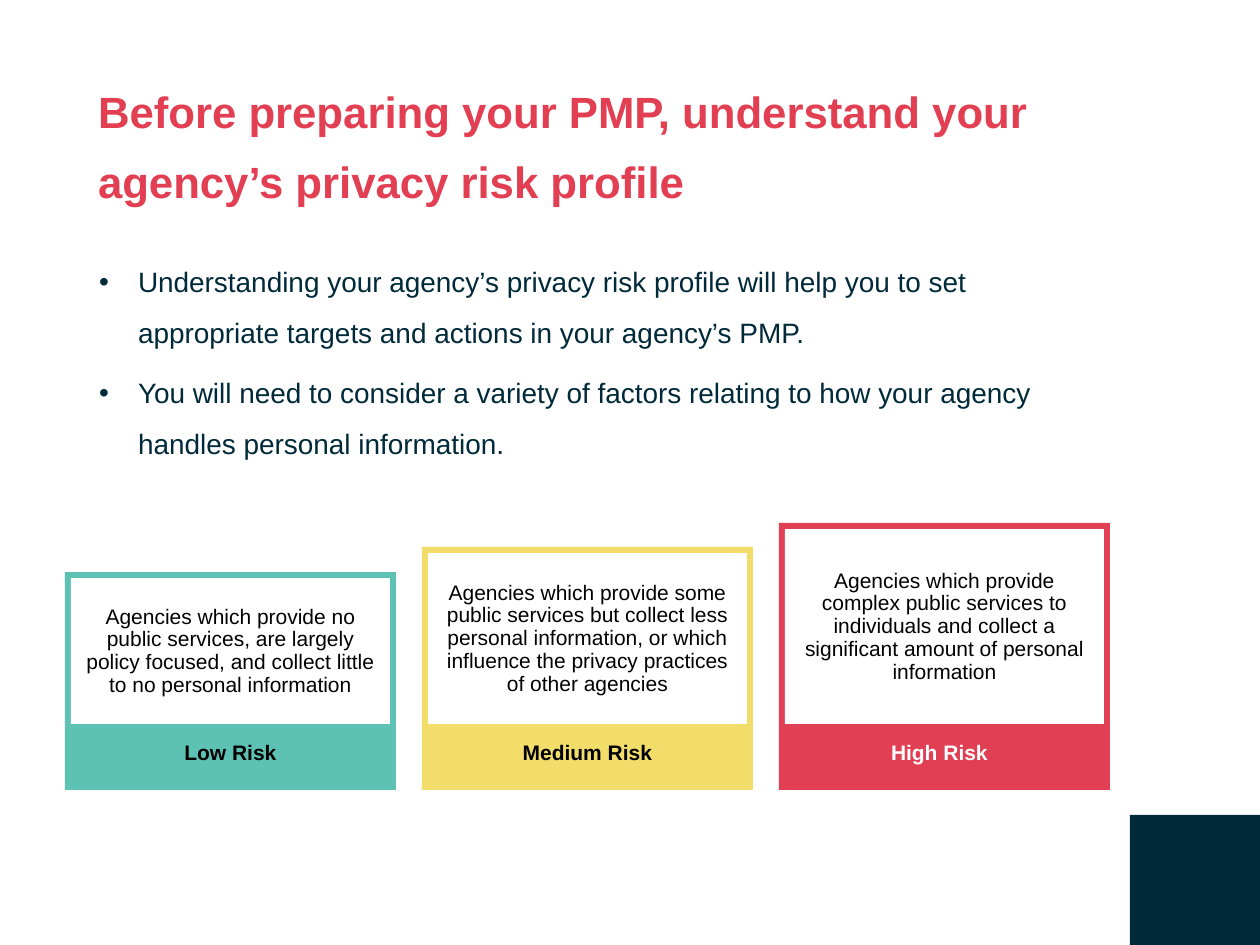
import dataclasses

import lxml.etree
import pptx
import pptx.dml.color
import pptx.enum.shapes
import pptx.enum.text
import pptx.oxml.ns
import pptx.util

SCALE = 914400 // 126
ALIGN = pptx.enum.text.PP_ALIGN
ANCHOR = pptx.enum.text.MSO_ANCHOR


@dataclasses.dataclass(frozen=True)
class Theme:
    font: str = "Arial"
    head: str = "E23F53"
    navy: str = "002A3A"
    teal: str = "5DC2B3"
    gold: str = "F2DD6B"
    red: str = "E13F54"
    black: str = "000000"
    white: str = "FFFFFF"
    large: int = 25
    body: int = 16
    small: int = 12


THEME = Theme()


def px(num):
    return pptx.util.Emu(num * SCALE)


def tint(code):
    return pptx.dml.color.RGBColor.from_string(code)


def place(shape, left, top, width, height):
    shape.left, shape.top = px(left), px(top)
    shape.width, shape.height = px(width), px(height)


def write(para, text, size, color, bold=False, align=ALIGN.LEFT):
    para.alignment = align
    run = para.add_run()
    run.text = text
    run.font.name = THEME.font
    run.font.size = pptx.util.Pt(size)
    run.font.bold = bold
    run.font.color.rgb = tint(color)


def block(slide, left, top, width, height, color):
    shape = slide.shapes.add_shape(
        pptx.enum.shapes.MSO_SHAPE.RECTANGLE,
        px(left), px(top), px(width), px(height))
    shape.shadow.inherit = False
    shape.fill.solid()
    shape.fill.fore_color.rgb = tint(color)
    shape.line.fill.background()
    return shape


def label(slide, left, top, width, height, text, color):
    box = slide.shapes.add_textbox(px(left), px(top), px(width), px(height))
    box.text_frame.word_wrap = True
    write(box.text_frame.paragraphs[0], text, THEME.small, color, True,
          ALIGN.CENTER)


def holder(shape, left, top, width, height):
    place(shape, left, top, width, height)
    frame = shape.text_frame
    frame.margin_left = frame.margin_right = 0
    frame.margin_top = frame.margin_bottom = 0
    frame.vertical_anchor = ANCHOR.TOP
    frame.auto_size = pptx.enum.text.MSO_AUTO_SIZE.NONE
    frame.word_wrap = True
    return frame


def title(slide, text):
    para = holder(slide.shapes.title, 98, 67, 1000, 97).paragraphs[0]
    para.line_spacing = pptx.util.Pt(40)
    write(para, text, THEME.large, THEME.head, True)


def points(slide, items):
    frame = holder(slide.placeholders[1], 99, 248, 1000, 472)
    for num, text in enumerate(items):
        para = frame.add_paragraph() if num else frame.paragraphs[0]
        props = para._p.get_or_add_pPr()
        props.set("marL", str(px(39)))
        props.set("indent", str(px(-39)))
        mark = lxml.etree.SubElement(props, pptx.oxml.ns.qn("a:buChar"))
        mark.set("char", "•")
        para.line_spacing = 1.5
        para.space_before = pptx.util.Pt(3 if num else 0)
        para.space_after = pptx.util.Pt(3)
        write(para, text, THEME.body, THEME.navy)


def card(slide, left, top, fill, text, name, color, shift):
    block(slide, left, top, 331, 790 - top, fill)
    panel = block(slide, left + 6, top + 6, 319, 718 - top, THEME.white)
    frame = panel.text_frame
    frame.word_wrap = True
    frame.vertical_anchor = ANCHOR.MIDDLE
    para = frame.paragraphs[0]
    para.line_spacing = pptx.util.Pt(13)
    write(para, text, THEME.small, THEME.black, align=ALIGN.CENTER)
    label(slide, left + shift, 733, 331, 42, name, color)


def main():
    deck = pptx.Presentation()
    deck.slide_width, deck.slide_height = px(1260), px(945)
    slide = deck.slides.add_slide(deck.slide_layouts[1])
    block(slide, 1130, 815, 130, 130, THEME.navy)
    title(slide, "Before preparing your PMP, understand your "
                 "agency’s privacy risk profile")
    points(slide, [
        "Understanding your agency’s privacy risk profile will help you to "
        "set appropriate targets and actions in your agency’s PMP.",
        "You will need to consider a variety of factors relating to how your "
        "agency handles personal information.",
    ])
    cards = [
        (572, THEME.teal, "Agencies which provide no public services, are "
         "largely policy focused, and collect little to no personal "
         "information", "Low Risk", THEME.black, 0),
        (547, THEME.gold, "Agencies which provide some public services but "
         "collect less personal information, or which influence the privacy "
         "practices of other agencies", "Medium Risk", THEME.black, 0),
        (523, THEME.red, "Agencies which provide complex public services to "
         "individuals and collect a significant amount of personal "
         "information", "High Risk", THEME.white, -5),
    ]
    for num, data in enumerate(cards):
        card(slide, 65 + 357 * num, *data)
    deck.save("out.pptx")


if __name__ == "__main__":
    main()
